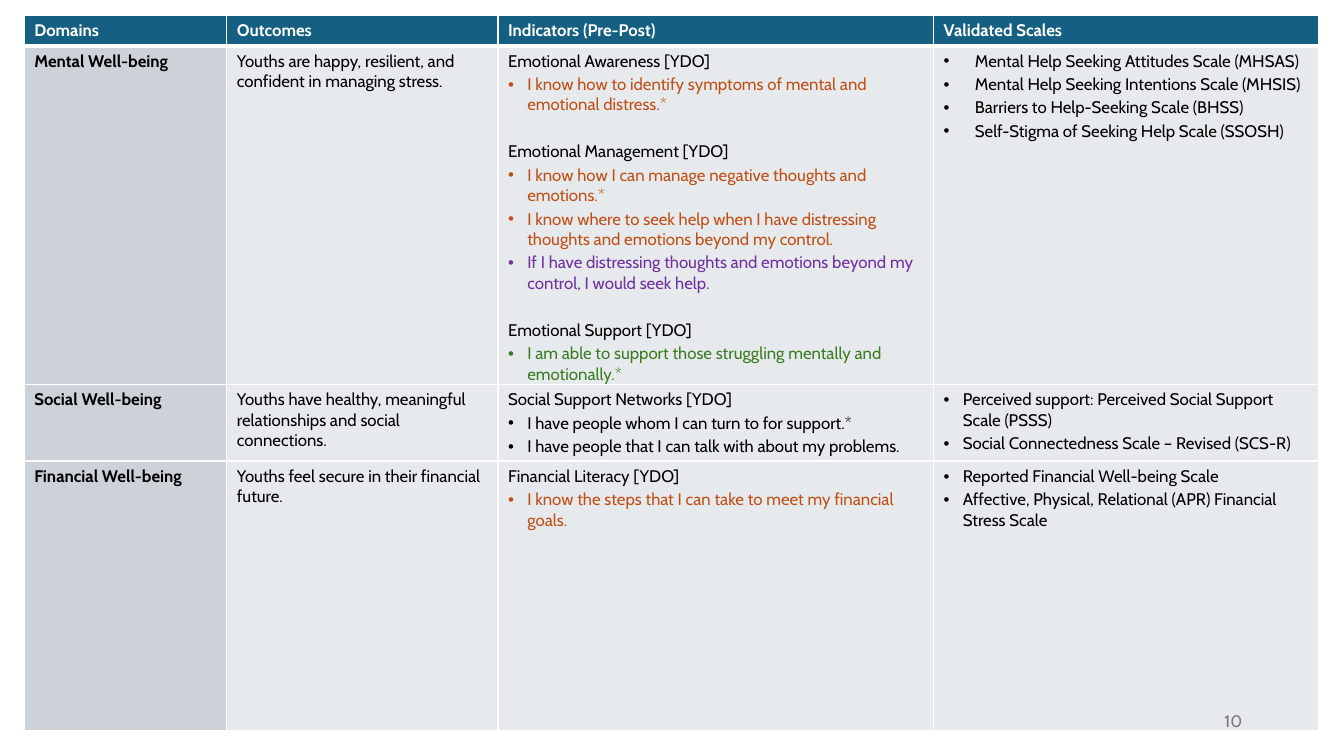
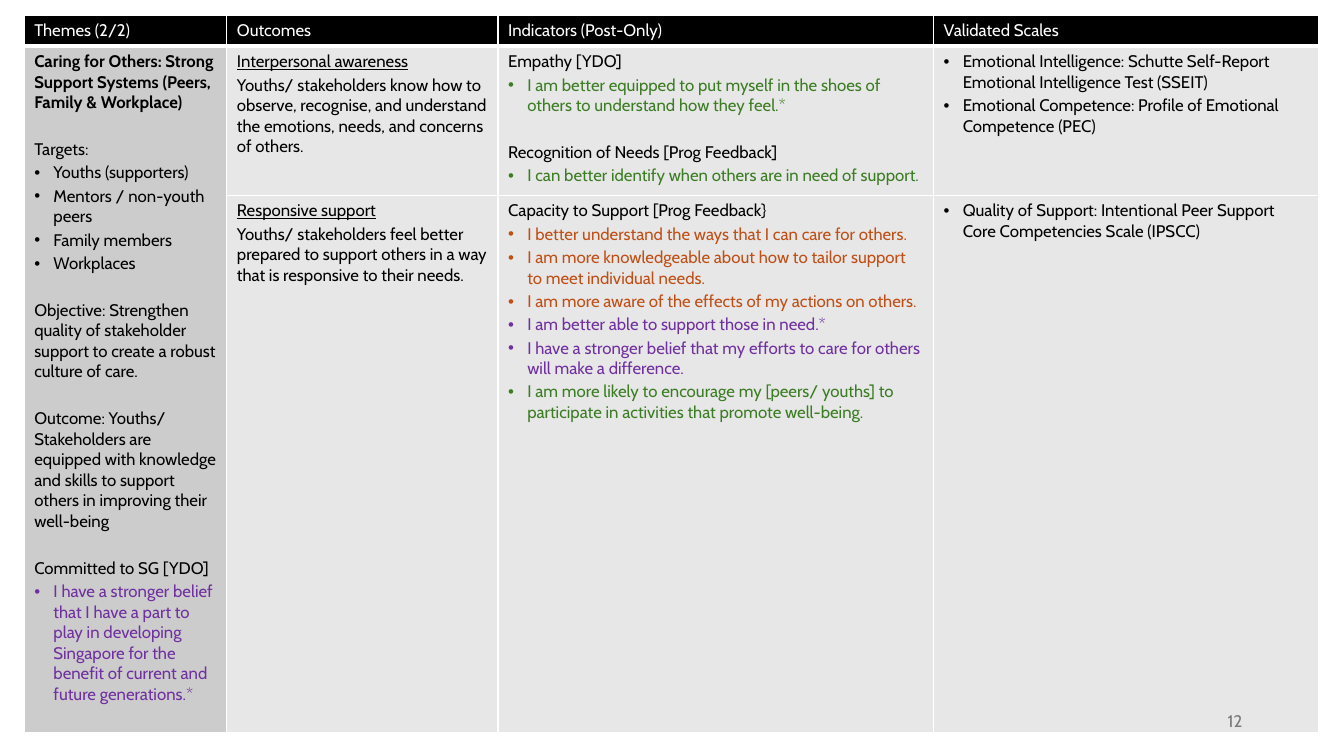
from dataclasses import dataclass
from lxml import etree
from pptx import Presentation
from pptx.dml.color import RGBColor
from pptx.enum.text import MSO_ANCHOR, PP_ALIGN
from pptx.oxml.ns import qn
from pptx.util import Inches, Pt

MID = MSO_ANCHOR.MIDDLE
RIGHT = PP_ALIGN.RIGHT


@dataclass(frozen=True)
class Theme:
    font: str = "Cabin"
    size: int = 12
    after: int = 2
    gap: float = 16.8
    pad: float = 0.05
    white: str = "FFFFFF"
    black: str = "000000"
    grey: str = "797979"
    know: str = "C04F15"
    feel: str = "7030A0"
    act: str = "3B7D23"


@dataclass(frozen=True)
class Line:
    text: str
    color: str = Theme.black
    bold: bool = False
    under: bool = False
    dent: float = 0
    gap: bool = False


@dataclass(frozen=True)
class Skin:
    head: str
    side: str
    body: str
    bold: bool


T = Theme()
BLUE = Skin("156082", "CCD2D8", "E7EAED", True)
DARK = Skin("000000", "CCCCCC", "E7E7E7", False)
GRID = (0.24, 0.15, 12.84)
PAGE = (9.42, 6.95, 3, 0.4)
COLS = (2.01, 2.69, 4.32, 3.82)
DENT = 0.19


def dots(*texts, color=T.black, dent=DENT):
    return [Line(text, color, dent=dent) for text in texts]


def after(text):
    return Line(text, gap=True)


def bold(text):
    return Line(text, bold=True)


def under(text):
    return Line(text, under=True)


def style(run, color, heavy=False, under=False):
    font = run.font
    font.name, font.size = T.font, Pt(T.size)
    font.bold, font.underline = heavy, under
    font.color.rgb = RGBColor.from_string(color)


def bullet(para, dent):
    props = para._p.get_or_add_pPr()
    props.set("marL", str(Inches(dent)))
    props.set("indent", str(-Inches(dent)))
    etree.SubElement(props, qn("a:buFont")).set("typeface", "Arial")
    etree.SubElement(props, qn("a:buChar")).set("char", "•")


def write(frame, lines, space):
    frame.text = "\n".join(line.text for line in lines)
    for para, line in zip(frame.paragraphs, lines):
        para.space_after = Pt(space)
        if line.gap:
            para.space_before = Pt(T.gap)
        if line.dent:
            bullet(para, line.dent)
        for run in para.runs:
            style(run, line.color, line.bold, line.under)


def edge(cell, low):
    props = cell._tc.get_or_add_tcPr()
    for side, width in (("L", 1), ("R", 1), ("T", 1), ("B", low)):
        rule = etree.SubElement(props, qn("a:ln" + side), w=str(Pt(width)))
        fill = etree.SubElement(rule, qn("a:solidFill"))
        etree.SubElement(fill, qn("a:srgbClr"), val=T.white)


def paint(cell, lines, fill, head):
    edge(cell, 3 if head else 1)
    cell.fill.solid()
    cell.fill.fore_color.rgb = RGBColor.from_string(fill)
    cell.margin_top = Inches(T.pad)
    cell.margin_bottom = Inches(T.pad if head else 0)
    write(cell.text_frame, lines, 0 if head else T.after)


def table(slide, box, skin, heads, rows, highs):
    left, top, width = box
    shape = slide.shapes.add_table(len(highs), len(COLS), Inches(left), Inches(top),
                                   Inches(width), Inches(sum(highs)))
    grid = shape.table
    grid.first_row = grid.horz_banding = False
    for col, share in zip(grid.columns, COLS):
        col.width = Inches(width * share / sum(COLS))
    for row, high in zip(grid.rows, highs):
        row.height = Inches(high)
    for c, text in enumerate(heads):
        paint(grid.cell(0, c), [Line(text, T.white, skin.bold)], skin.head, True)
    for r, row in enumerate(rows, 1):
        for c, lines in enumerate(row):
            paint(grid.cell(r, c), lines or [], skin.body if c else skin.side, False)
            if lines is None:
                grid.cell(r - 1, c).merge(grid.cell(r, c))


def number(slide, box, text):
    frame = slide.shapes.add_textbox(*map(Inches, box)).text_frame
    frame.word_wrap = True
    frame.vertical_anchor = MID
    write(frame, [Line(text, T.grey)], 0)
    frame.paragraphs[0].alignment = RIGHT


DOMAINS = [
    [
        [bold("Mental Well-being")],
        [Line("Youths are happy, resilient, and confident in managing stress.")],
        [
            Line("Emotional Awareness [YDO]"),
            *dots("I know how to identify symptoms of mental and emotional distress.*",
                  color=T.know),
            after("Emotional Management [YDO]"),
            *dots("I know how I can manage negative thoughts and emotions.*",
                  "I know where to seek help when I have distressing thoughts and "
                  "emotions beyond my control.", color=T.know),
            *dots("If I have distressing thoughts and emotions beyond my control, "
                  "I would seek help.", color=T.feel),
            after("Emotional Support [YDO]"),
            *dots("I am able to support those struggling mentally and emotionally.*",
                  color=T.act),
        ],
        dots("Mental Help Seeking Attitudes Scale (MHSAS)",
             "Mental Help Seeking Intentions Scale (MHSIS)",
             "Barriers to Help-Seeking Scale (BHSS)",
             "Self-Stigma of Seeking Help Scale (SSOSH)", dent=0.31),
    ],
    [
        [bold("Social Well-being")],
        [Line("Youths have healthy, meaningful relationships and social connections.")],
        [
            Line("Social Support Networks [YDO]"),
            *dots("I have people whom I can turn to for support.*",
                  "I have people that I can talk with about my problems."),
        ],
        dots("Perceived support: Perceived Social Support Scale (PSSS)",
             "Social Connectedness Scale – Revised (SCS-R)"),
    ],
    [
        [bold("Financial Well-being")],
        [Line("Youths feel secure in their financial future.")],
        [
            Line("Financial Literacy [YDO]"),
            *dots("I know the steps that I can take to meet my financial goals.",
                  color=T.know),
        ],
        dots("Reported Financial Well-being Scale",
             "Affective, Physical, Relational (APR) Financial Stress Scale"),
    ],
]

THEMES = [
    [
        [
            bold("Caring for Others: Strong Support Systems (Peers, Family & Workplace)"),
            after("Targets:"),
            *dots("Youths (supporters)", "Mentors / non-youth peers",
                  "Family members", "Workplaces"),
            after("Objective: Strengthen quality of stakeholder support to create "
                  "a robust culture of care."),
            after("Outcome: Youths/ Stakeholders are equipped with knowledge and "
                  "skills to support others in improving their well-being"),
            after("Committed to SG [YDO]"),
            *dots("I have a stronger belief that I have a part to play in developing "
                  "Singapore for the benefit of current and future generations.*",
                  color=T.feel),
        ],
        [
            under("Interpersonal awareness"),
            Line("Youths/ stakeholders know how to observe, recognise, and understand "
                 "the emotions, needs, and concerns of others."),
        ],
        [
            Line("Empathy [YDO]"),
            *dots("I am better equipped to put myself in the shoes of others to "
                  "understand how they feel.*", color=T.act),
            after("Recognition of Needs [Prog Feedback]"),
            *dots("I can better identify when others are in need of support.",
                  color=T.act),
        ],
        dots("Emotional Intelligence: Schutte Self-Report Emotional Intelligence "
             "Test (SSEIT)",
             "Emotional Competence: Profile of Emotional Competence (PEC)"),
    ],
    [
        None,
        [
            under("Responsive support"),
            Line("Youths/ stakeholders feel better prepared to support others in a way "
                 "that is responsive to their needs."),
        ],
        [
            Line("Capacity to Support [Prog Feedback}"),
            *dots("I better understand the ways that I can care for others.",
                  "I am more knowledgeable about how to tailor support to meet "
                  "individual needs.",
                  "I am more aware of the effects of my actions on others.",
                  color=T.know),
            *dots("I am better able to support those in need.*",
                  "I have a stronger belief that my efforts to care for others will "
                  "make a difference.", color=T.feel),
            *dots("I am more likely to encourage my [peers/ youths] to participate in "
                  "activities that promote well-being.", color=T.act),
        ],
        dots("Quality of Support: Intentional Peer Support Core Competencies "
             "Scale (IPSCC)"),
    ],
]

DECK = [
    (BLUE, ("Domains", "Outcomes", "Indicators (Pre-Post)", "Validated Scales"),
     DOMAINS, (0.3, 3.35, 0.76, 2.68), "10"),
    (DARK, ("Themes (2/2)", "Outcomes", "Indicators (Post-Only)", "Validated Scales"),
     THEMES, (0.31, 1.48, 5.33), "12"),
]


def main():
    deck = Presentation()
    deck.slide_width, deck.slide_height = Inches(13.33), Inches(7.5)
    for skin, heads, rows, highs, page in DECK:
        slide = deck.slides.add_slide(deck.slide_layouts[6])
        table(slide, GRID, skin, heads, rows, highs)
        number(slide, PAGE, page)
    deck.save("out.pptx")


if __name__ == "__main__":
    main()
